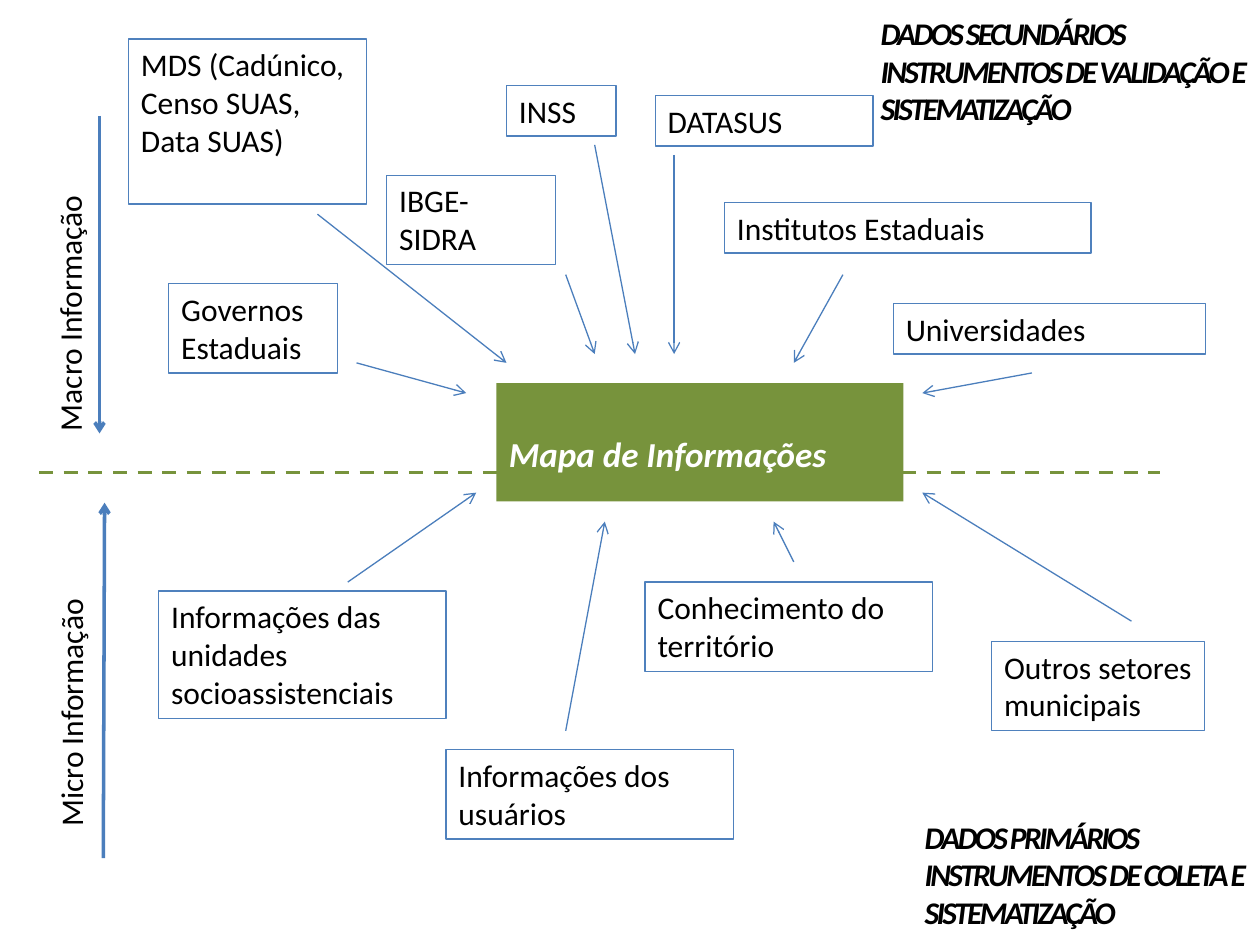
"""Builds the slide that maps secondary and primary information sources."""
from typing import NamedTuple

from lxml import etree
from pptx import Presentation, util as u
from pptx.dml.color import RGBColor
from pptx.enum import dml, shapes, text
from pptx.oxml import ns

GREEN = RGBColor(0x77, 0x93, 0x3C)
BORDER_BLUE = RGBColor(0x4F, 0x81, 0xBD)
ARROW_BLUE = RGBColor(0x4B, 0x7E, 0xBC)
BLACK = RGBColor(0, 0, 0)
WHITE = RGBColor(0xFF, 0xFF, 0xFF)

BODY = {"name": "Calibri", "size": u.Pt(18)}
EMPHASIS = {**BODY, "bold": True, "italic": True}
CENTRE = {**EMPHASIS, "size": u.Pt(20)}


class Source(NamedTuple):
    words: str
    left: float
    top: float
    width: float
    height: float


class Label(NamedTuple):
    lines: tuple
    left: float
    top: float
    width: float
    height: float
    fonts: dict
    rotation: int = 0
    spacing: int = 0


class Line(NamedTuple):
    x1: float
    y1: float
    x2: float
    y2: float
    weight: float = 0.75


SOURCES = (
    Source("MDS (Cadúnico, Censo SUAS, Data SUAS)", 1.02, 0.31, 1.89, 1.31),
    Source("IBGE- SIDRA", 3.07, 1.39, 1.34, 0.71),
    Source("INSS", 4.02, 0.68, 0.87, 0.4),
    Source("DATASUS", 5.2, 0.76, 1.73, 0.4),
    Source("Institutos Estaduais", 5.75, 1.61, 2.91, 0.4),
    Source("Universidades", 7.09, 2.41, 2.48, 0.4),
    Source("Governos Estaduais", 1.34, 2.25, 1.34, 0.71),
    Source("Informações das unidades socioassistenciais", 1.26, 4.69, 2.28, 1.01),
    Source("Informações dos usuários", 3.54, 5.95, 2.28, 0.71),
    Source("Conhecimento do território", 5.12, 4.62, 2.28, 0.71),
    Source("Outros setores municipais", 7.87, 5.09, 1.69, 0.71),
)

LABELS = (
    Label(("DADOS SECUNDÁRIOS", "INSTRUMENTOS DE VALIDAÇÃO E SISTEMATIZAÇÃO"),
          6.89, 0.06, 3.98, 1.01, EMPHASIS, spacing=-150),
    Label(("DADOS PRIMÁRIOS", "INSTRUMENTOS DE COLETA E SISTEMATIZAÇÃO"),
          7.24, 6.44, 3.98, 1.01, EMPHASIS, spacing=-150),
    Label(("Macro Informação",), -0.99, 1.78, 3.08, 0.4, BODY, rotation=270),
    Label(("Micro Informação",), -0.98, 4.92, 3.08, 0.4, BODY, rotation=270),
)

ARROWS = (
    Line(2.83, 2.88, 3.7, 3.12),
    Line(4.49, 2.18, 4.72, 2.81),
    Line(2.52, 1.7, 4.02, 2.88),
    Line(4.72, 1.15, 5.04, 2.81),
    Line(5.35, 1.23, 5.35, 2.81),
    Line(6.69, 2.18, 6.3, 2.88),
    Line(8.19, 2.96, 7.32, 3.12),
    Line(2.76, 4.62, 3.78, 3.91),
    Line(4.49, 5.8, 4.8, 4.14),
    Line(6.3, 4.46, 6.14, 4.14),
    Line(8.98, 4.93, 7.32, 3.91),
    Line(0.79, 0.92, 0.79, 3.44, 2),
    Line(0.82, 6.81, 0.83, 3.99, 2),
)
DIVIDER = Line(0.31, 3.75, 9.21, 3.75, 2)


def write_lines(frame, lines: tuple, fonts: dict, color: RGBColor, spacing: int = 0) -> None:
    frame.word_wrap = True
    frame.vertical_anchor = text.MSO_ANCHOR.TOP
    for index, words in enumerate(lines):
        para = frame.add_paragraph() if index else frame.paragraphs[0]
        para.alignment = text.PP_ALIGN.LEFT
        span = para.add_run()
        span.text = words
        for name, value in fonts.items():
            setattr(span.font, name, value)
        span.font.color.rgb = color
        if spacing:
            span.font._element.set("spc", str(spacing))


def add_box(page, source: Source, fonts: dict, color: RGBColor):
    box = page.shapes.add_shape(shapes.MSO_SHAPE.RECTANGLE, *map(u.Inches, source[1:]))
    box.shadow.inherit = False
    write_lines(box.text_frame, (source.words,), fonts, color)
    return box


def add_source(page, source: Source) -> None:
    box = add_box(page, source, BODY, BLACK)
    box.fill.background()
    box.line.color.rgb = BORDER_BLUE
    box.line.width = u.Pt(0.75)


def add_map(page) -> None:
    box = add_box(page, Source("Mapa de Informações", 3.94, 3.04, 3.23, 0.94), CENTRE, WHITE)
    box.fill.solid()
    box.fill.fore_color.rgb = GREEN
    box.line.fill.background()
    box.text_frame.margin_top = u.Inches(0.39)


def add_label(page, label: Label) -> None:
    box = page.shapes.add_textbox(*map(u.Inches, label[1:5]))
    box.rotation = label.rotation
    write_lines(box.text_frame, label.lines, label.fonts, BLACK, label.spacing)


def add_line(page, line: Line, color: RGBColor):
    connector = page.shapes.add_connector(
        shapes.MSO_CONNECTOR.STRAIGHT, *map(u.Inches, line[:4]))
    connector.line.color.rgb = color
    connector.line.width = u.Pt(line.weight)
    etree.SubElement(connector._element.spPr, ns.qn("a:effectLst"))
    return connector


def add_arrow(page, line: Line) -> None:
    connector = add_line(page, line, ARROW_BLUE)
    outline = connector.line._get_or_add_ln()
    etree.SubElement(outline, ns.qn("a:tailEnd"), type="arrow")


def main() -> None:
    deck = Presentation()
    deck.slide_width, deck.slide_height = u.Inches(10), u.Inches(7.5)
    page = deck.slides.add_slide(deck.slide_layouts[6])
    add_line(page, DIVIDER, GREEN).line.dash_style = dml.MSO_LINE.DASH
    add_map(page)
    for source in SOURCES:
        add_source(page, source)
    for label in LABELS:
        add_label(page, label)
    for arrow in ARROWS:
        add_arrow(page, arrow)
    deck.save("out.pptx")


if __name__ == "__main__":
    main()
